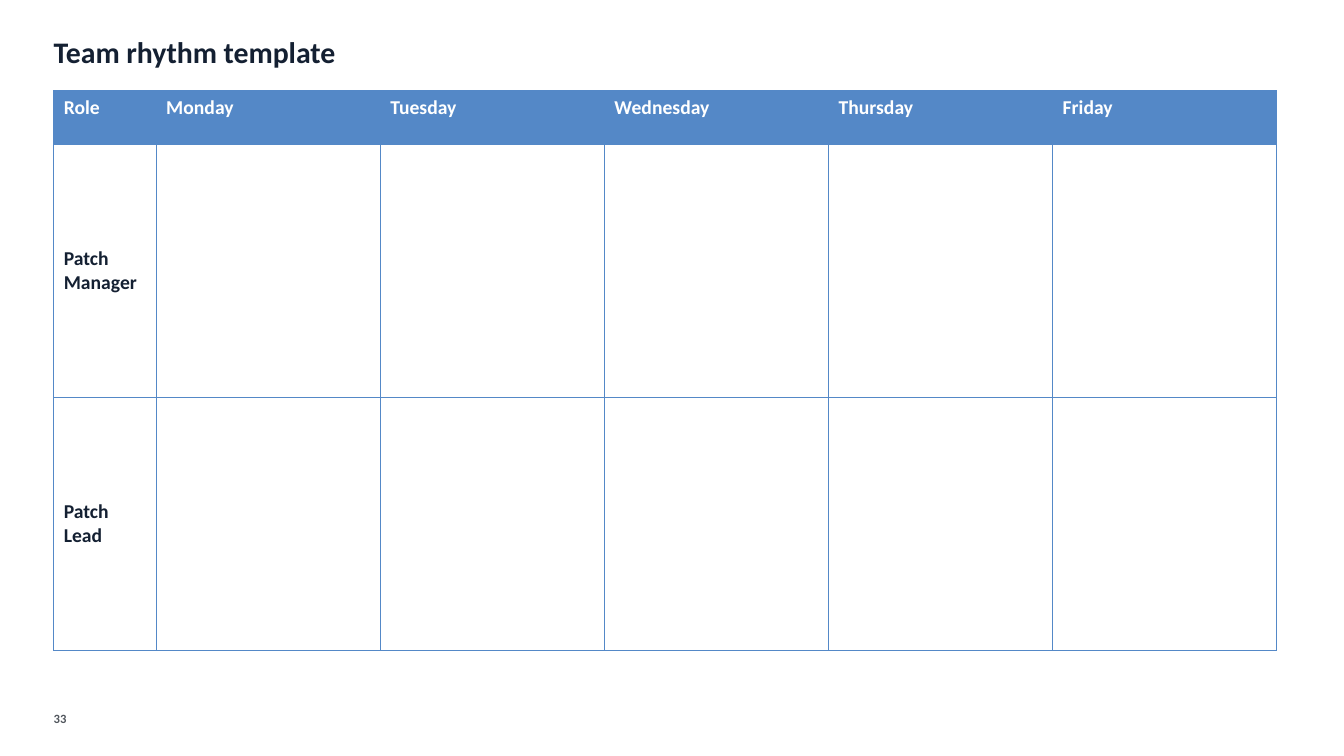
import dataclasses

import pptx
import pptx.dml.color
import pptx.enum.text
import pptx.oxml
import pptx.oxml.ns
import pptx.util


@dataclasses.dataclass(frozen=True)
class Theme:
    font: str = "Calibri"
    ink: str = "142032"
    accent: str = "5488C7"
    muted: str = "51565D"
    white: str = "FFFFFF"
    title_size: float = 21.3
    table_size: float = 14
    number_size: float = 9
    border_width: float = 0.5


class RhythmPage:
    def __init__(self, deck, theme):
        self.deck = deck
        self.theme = theme
        self.page = deck.slides.add_slide(deck.slide_layouts[5])

    def area(self, left, top, width, height):
        across, down = self.deck.slide_width, self.deck.slide_height
        shares = (left * across, top * down, width * across, height * down)
        return [round(share) for share in shares]

    def add_text(self, frame, text, size, color):
        para = frame.paragraphs[0]
        span = para.add_run()
        span.text = text
        values = {"name": self.theme.font, "size": pptx.util.Pt(size), "bold": True}
        for name, value in values.items():
            setattr(span.font, name, value)
        span.font.color.rgb = pptx.dml.color.RGBColor.from_string(color)
        return para

    def plain_frame(self, box, wrap):
        values = {
            "margin_left": 0,
            "margin_top": 0,
            "margin_right": 0,
            "margin_bottom": 0,
            "word_wrap": wrap,
            "auto_size": pptx.enum.text.MSO_AUTO_SIZE.NONE,
            "vertical_anchor": pptx.enum.text.MSO_ANCHOR.TOP,
        }
        for name, value in values.items():
            setattr(box.text_frame, name, value)
        return box.text_frame

    def title(self, text, area):
        box = self.page.shapes.title
        for name, value in zip(("left", "top", "width", "height"), self.area(*area)):
            setattr(box, name, value)
        frame = self.plain_frame(box, True)
        para = self.add_text(frame, text, self.theme.title_size, self.theme.ink)
        para.alignment = pptx.enum.text.PP_ALIGN.LEFT
        para.line_spacing = 0.9

    def page_number(self, text, area):
        box = self.page.shapes.add_textbox(*self.area(*area))
        frame = self.plain_frame(box, False)
        self.add_text(frame, text, self.theme.number_size, self.theme.muted)

    def border(self, cell):
        properties = cell._tc.get_or_add_tcPr()
        width = pptx.util.Pt(self.theme.border_width)
        for position, side in enumerate(("lnL", "lnR", "lnT", "lnB")):
            line = pptx.oxml.parse_xml(
                f'<a:{side} {pptx.oxml.ns.nsdecls("a")} w="{width}"><a:solidFill>'
                f'<a:srgbClr val="{self.theme.accent}"/></a:solidFill></a:{side}>'
            )
            properties.insert(position, line)

    def schedule(self, headings, roles, area, role_share, heading_share):
        left, top, width, height = self.area(*area)
        table = self.page.shapes.add_table(
            len(roles) + 1, len(headings), left, top, width, height
        ).table
        role_width = round(width * role_share)
        heading_height = round(height * heading_share)
        day_width = (width - role_width) // (len(headings) - 1)
        role_height = (height - heading_height) // len(roles)
        for index, column in enumerate(table.columns):
            column.width = day_width if index else role_width
        for index, row in enumerate(table.rows):
            row.height = role_height if index else heading_height

        rows = [headings] + [[role] + [""] * (len(headings) - 1) for role in roles]
        for row_index, texts in enumerate(rows):
            for column_index, text in enumerate(texts):
                cell = table.cell(row_index, column_index)
                fill = self.theme.white if row_index else self.theme.accent
                ink = self.theme.ink if row_index else self.theme.white
                cell.fill.solid()
                cell.fill.fore_color.rgb = pptx.dml.color.RGBColor.from_string(fill)
                self.border(cell)
                if text:
                    self.add_text(cell.text_frame, text, self.theme.table_size, ink)
                if row_index:
                    cell.vertical_anchor = pptx.enum.text.MSO_ANCHOR.MIDDLE


def main():
    deck = pptx.Presentation()
    deck.slide_width = pptx.util.Inches(13.33)
    deck.slide_height = pptx.util.Inches(7.5)

    rhythm = RhythmPage(deck, Theme())
    rhythm.title("Team rhythm template", (0.04, 0.05, 0.82, 0.06))
    rhythm.schedule(
        ["Role", "Monday", "Tuesday", "Wednesday", "Thursday", "Friday"],
        ["Patch Manager", "Patch Lead"],
        area=(0.04, 0.12, 0.91, 0.74),
        role_share=0.08375,
        heading_share=0.096,
    )
    rhythm.page_number("33", (0.04, 0.94, 0.01, 0.02))
    deck.save("out.pptx")


if __name__ == "__main__":
    main()
